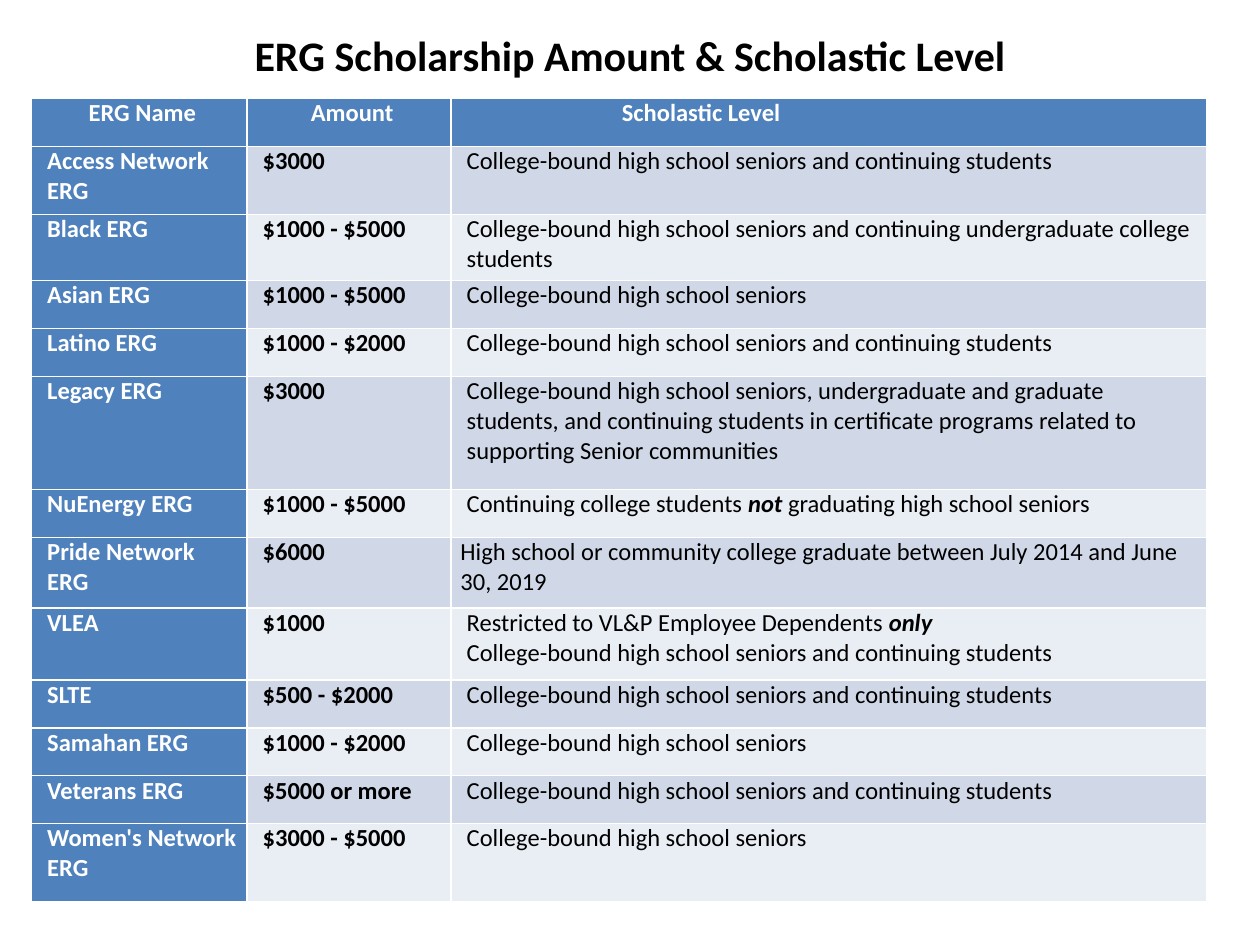
from pptx import Presentation
from pptx.dml.color import RGBColor
from pptx.enum.text import MSO_ANCHOR, PP_ALIGN
from pptx.util import Pt

CENTER, LEFT = PP_ALIGN.CENTER, PP_ALIGN.LEFT
MIDDLE = MSO_ANCHOR.MIDDLE
BLACK = RGBColor(0x00, 0x00, 0x00)
WHITE = RGBColor(0xFF, 0xFF, 0xFF)
BLUE = RGBColor(0x4F, 0x81, 0xBD)
BANDS = [RGBColor(0xE9, 0xED, 0xF4), RGBColor(0xD0, 0xD8, 0xE8)]

SENIORS = "College-bound high school seniors"
CONTINUING = SENIORS + " and continuing students"
COL_WIDTHS = [123.12, 116.64, 432]
HEADER = ("ERG Name", "Amount", "Scholastic Level")
ROW = 27.4
INDENT = 3.6

# Group, amount, level, row height; *...* marks emphasis, a newline a paragraph
GRANTS = [
    ("Access Network ERG", "$3000", CONTINUING, 38.9),
    ("Black ERG", "$1000 - $5000",
     SENIORS + " and continuing undergraduate college students", 37.9),
    ("Asian ERG", "$1000 - $5000", SENIORS, ROW),
    ("Latino ERG", "$1000 - $2000", CONTINUING, ROW),
    ("Legacy ERG", "$3000",
     SENIORS + ", undergraduate and graduate students, and continuing students "
     "in certificate programs related to supporting Senior communities", 64.6),
    ("NuEnergy ERG", "$1000 - $5000",
     "Continuing college students *not* graduating high school seniors", ROW),
    ("Pride Network ERG", "$6000",
     "High school or community college graduate between July 2014 and June 30, 2019",
     40.4),
    ("VLEA", "$1000",
     "Restricted to VL&P Employee Dependents *only*\n" + CONTINUING, 41),
    ("SLTE", "$500 - $2000", CONTINUING, ROW),
    ("Samahan ERG", "$1000 - $2000", SENIORS, ROW),
    ("Veterans ERG", "$5000 or more", CONTINUING, ROW),
    ("Women's Network ERG", "$3000 - $5000", SENIORS, 44.4),
]


def add_run(p, text, size, color, bold, italic=False):
    r = p.add_run()
    r.text = text
    r.font.name = "Calibri"
    r.font.size = Pt(size)
    r.font.color.rgb = color
    r.font.bold = bold
    r.font.italic = italic


def fill_cell(cell, text, fill, color, bold, align=LEFT, indent=INDENT):
    cell.fill.solid()
    cell.fill.fore_color.rgb = fill
    cell.margin_left = cell.margin_right = Pt(5.4)
    cell.margin_top = cell.margin_bottom = 0
    tf = cell.text_frame
    for i, line in enumerate(text.split("\n")):
        p = tf.add_paragraph() if i else tf.paragraphs[0]
        p.alignment = align
        p._p.get_or_add_pPr().set("marL", str(Pt(indent)))
        for j, part in enumerate(line.split("*")):
            if part:
                add_run(p, part, 14, color, bold or j % 2 == 1, j % 2 == 1)


prs = Presentation()
prs.slide_width, prs.slide_height = Pt(720), Pt(540)
s = prs.slides.add_slide(prs.slide_layouts[6])

# Title
tf = s.shapes.add_textbox(Pt(36), Pt(12.5), Pt(648), Pt(38)).text_frame
tf.word_wrap = True
tf.vertical_anchor = MIDDLE
p = tf.paragraphs[0]
p.alignment = CENTER
add_run(p, "ERG Scholarship Amount & Scholastic Level", 24, BLACK, True)

# Table
heights = [ROW] + [grant[3] for grant in GRANTS]
table = s.shapes.add_table(len(heights), len(COL_WIDTHS), Pt(18), Pt(56.2),
                           Pt(sum(COL_WIDTHS)), Pt(sum(heights))).table
table.first_col = True
for column, width in zip(table.columns, COL_WIDTHS):
    column.width = Pt(width)
for row, height in zip(table.rows, heights):
    row.height = Pt(height)

# Header row: the last heading is set in from the left
for c, heading in enumerate(HEADER):
    last = c == len(HEADER) - 1
    fill_cell(table.cell(0, c), heading, BLUE, WHITE, True,
              LEFT if last else CENTER, 92.2 if last else INDENT)

# Body rows
for i, (group, amount, level, height) in enumerate(GRANTS, start=1):
    band = BANDS[i % 2]
    fill_cell(table.cell(i, 0), group, BLUE, WHITE, True)
    fill_cell(table.cell(i, 1), amount, band, BLACK, True)
    fill_cell(table.cell(i, 2), level, band, BLACK, False,
              indent=0 if group.startswith("Pride") else INDENT)

prs.save("out.pptx")
